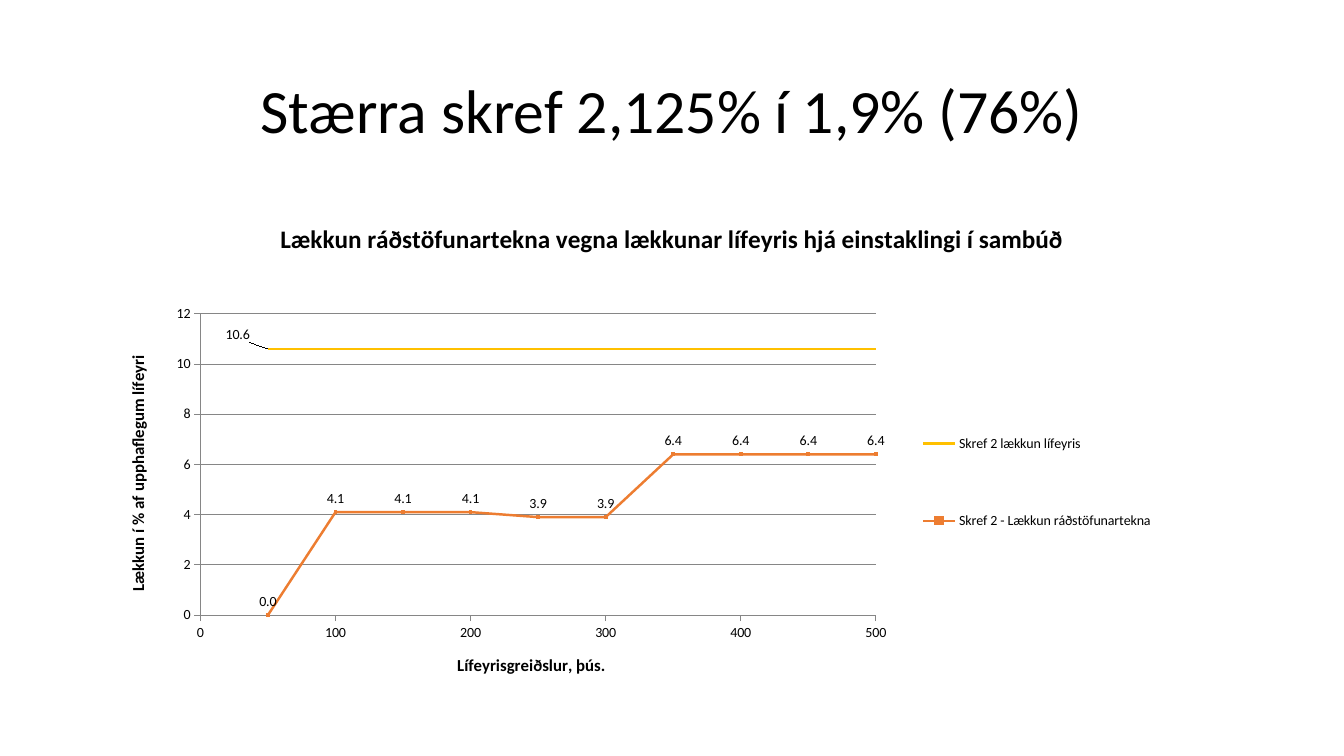
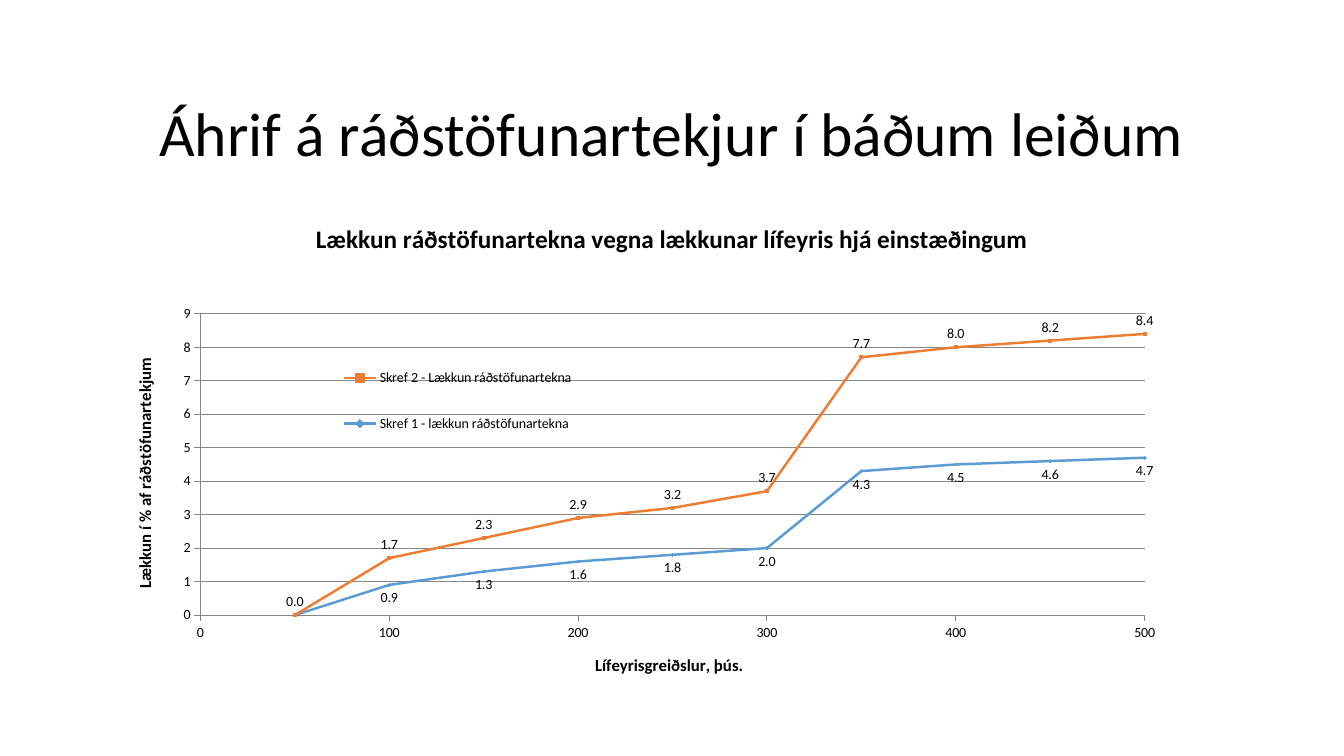
import dataclasses

import pptx
import pptx.chart.data
import pptx.chart.datalabel
import pptx.dml.color
import pptx.enum.chart
import pptx.enum.text
import pptx.oxml
import pptx.oxml.ns
import pptx.util
from lxml import etree

CHART_ENUM = pptx.enum.chart
COLUMNS, ROWS = 29, 30


@dataclasses.dataclass(frozen=True)
class Theme:
    font: str = "Calibri"
    text: str = "000000"
    grid: str = "868686"
    gold: str = "FFC000"
    orange: str = "ED7D31"
    blue: str = "5B9BD5"
    title_size: int = 44
    chart_title_size: int = 18
    axis_title_size: int = 12
    chart_size: int = 10
    series_width: float = 1.75
    axis_width: float = 0.75


THEME = Theme()


@dataclasses.dataclass
class Line:
    """One scatter series: its values, look and labels."""
    name: str
    values: list
    color: str
    marker: object = None
    label_position: object = None
    first_label: object = "shown"  # "shown", "hidden" or an (x, y) offset


def color_of(value):
    return pptx.dml.color.RGBColor.from_string(value)


def style_font(font, size, color=THEME.text, bold=False):
    font.name = THEME.font
    font.size = pptx.util.Pt(size)
    font.bold = bold
    font.color.rgb = color_of(color)


def write(frame, text, size, bold=False, align=None, spacing=None):
    para = frame.paragraphs[0]
    span = para.add_run()
    span.text = text
    style_font(span.font, size, bold=bold)
    if align is not None:
        para.alignment = align
    if spacing is not None:
        para.line_spacing = spacing


def style_line(line, color, width):
    line.color.rgb = color_of(color)
    line.width = pptx.util.Pt(width)


def add_child(parent, tag, value=None):
    child = etree.SubElement(parent, pptx.oxml.ns.qn("c:" + tag))
    if value is not None:
        child.set("val", str(value))
    return child


def set_layout(parent, index, inner=False, edge=True, **shares):
    """Place a chart part by shares of the chart; without edge they are offsets."""
    for old in parent.findall(pptx.oxml.ns.qn("c:layout")):
        parent.remove(old)
    layout = add_child(parent, "layout")
    manual = add_child(layout, "manualLayout")
    if inner:
        add_child(manual, "layoutTarget", "inner")
    if edge:
        add_child(manual, "xMode", "edge")
        add_child(manual, "yMode", "edge")
    for tag, share in shares.items():
        add_child(manual, tag, share)
    parent.insert(index, layout)


class Deck:
    def __init__(self):
        self.deck = pptx.Presentation()
        self.deck.slide_width = pptx.util.Inches(13.33)
        self.deck.slide_height = pptx.util.Inches(7.5)
        self.page = None

    def area(self, column, row, columns, rows):
        width = self.deck.slide_width / COLUMNS
        height = self.deck.slide_height / ROWS
        return [round(length) for length in
                (column * width, row * height, columns * width, rows * height)]

    def add_page(self):
        self.page = self.deck.slides.add_slide(self.deck.slide_layouts[6])

    def add_title(self, text, row):
        box = self.page.shapes.add_textbox(*self.area(2, row, 25, 5.8))
        frame = box.text_frame
        frame.word_wrap = True
        frame.vertical_anchor = pptx.enum.text.MSO_ANCHOR.MIDDLE
        write(frame, text, THEME.title_size,
              align=pptx.enum.text.PP_ALIGN.CENTER, spacing=0.9)

    def add_chart(self, title, value_title, top, step, lines, plot_width, legend):
        data = pptx.chart.data.XyChartData()
        for line in lines:
            series = data.add_series(line.name)
            for number, value in enumerate(line.values, 1):
                series.add_data_point(number * 50000, value)
        chart = self.page.shapes.add_chart(
            CHART_ENUM.XL_CHART_TYPE.XY_SCATTER_LINES,
            *self.area(2, 8, 25, 19.04), data).chart
        style_font(chart.font, THEME.chart_size)
        chart.has_title = True
        write(chart.chart_title.text_frame, title, THEME.chart_title_size, bold=True)
        chart.plots[0].vary_by_categories = False
        self.style_axis(chart.category_axis, "Lífeyrisgreiðslur, þús.",
                        500000, 100000, "#,##0,", False)
        self.style_axis(chart.value_axis, value_title, top, step, "0", True)
        for series, line in zip(chart.plots[0].series, lines):
            self.style_series(series, line)
        chart.has_legend = True
        chart.legend.position = CHART_ENUM.XL_LEGEND_POSITION.RIGHT
        chart.legend.include_in_layout = False
        set_layout(chart.legend._element, 1, **legend)
        plot_area = chart._chartSpace.chart.plotArea
        set_layout(plot_area, 0, inner=True, x=0.093, y=0.234, w=plot_width, h=0.628)

    def style_axis(self, axis, title, top, step, number_format, gridlines):
        axis.minimum_scale, axis.maximum_scale = 0, top
        axis.major_unit = step
        axis.major_tick_mark = CHART_ENUM.XL_TICK_MARK.OUTSIDE
        axis.minor_tick_mark = CHART_ENUM.XL_TICK_MARK.NONE
        axis.tick_labels.number_format = number_format
        axis.tick_labels.number_format_is_linked = False
        axis.has_major_gridlines = gridlines
        if gridlines:
            style_line(axis.major_gridlines.format.line, THEME.grid, THEME.axis_width)
        style_line(axis.format.line, THEME.grid, THEME.axis_width)
        axis.has_title = True
        write(axis.axis_title.text_frame, title, THEME.axis_title_size, bold=True)

    def style_series(self, series, line):
        series.smooth = False
        style_line(series.format.line, line.color, THEME.series_width)
        series.marker.style = line.marker or CHART_ENUM.XL_MARKER_STYLE.NONE
        if line.marker:
            series.marker.size = 2
            series.marker.format.fill.solid()
            series.marker.format.fill.fore_color.rgb = color_of(line.color)
            style_line(series.marker.format.line, line.color, THEME.axis_width)
        labels = pptx.chart.datalabel.DataLabels(series._element.get_or_add_dLbls())
        labels.show_value = line.label_position is not None
        labels.number_format = "0.0"
        labels.number_format_is_linked = False
        if line.label_position is not None:
            labels.position = line.label_position
        if line.first_label != "shown":
            self.adjust_first_label(series, line.first_label)

    def adjust_first_label(self, series, setting):
        label = series.points[0].data_label
        label.position = CHART_ENUM.XL_LABEL_POSITION.RIGHT
        element = series._element.get_or_add_dLbls().find(pptx.oxml.ns.qn("c:dLbl"))
        if setting == "hidden":
            for part in list(element)[1:]:
                element.remove(part)
            add_child(element, "delete", 1)
        else:
            set_layout(element, 1, edge=False, x=setting[0], y=setting[1])

    def save(self):
        self.deck.save("out.pptx")


def step_two(values):
    return Line("Skref 2 - Lækkun ráðstöfunartekna", values, THEME.orange,
                CHART_ENUM.XL_MARKER_STYLE.SQUARE,
                CHART_ENUM.XL_LABEL_POSITION.ABOVE)


def main():
    deck = Deck()

    deck.add_page()
    deck.add_title("Stærra skref 2,125% í 1,9% (76%)", 1.6)
    deck.add_chart(
        "Lækkun ráðstöfunartekna vegna lækkunar lífeyris hjá einstaklingi í sambúð",
        "Lækkun í % af upphaflegum lífeyri", 12, 2,
        [Line("Skref 2 lækkun lífeyris", [10.6] * 10, THEME.gold,
              first_label=(-0.04, -0.03)),
         step_two([0, 4.1, 4.1, 4.1, 3.9, 3.9, 6.4, 6.4, 6.4, 6.4])],
        plot_width=0.583, legend=dict(x=0.71, y=0.36, w=0.21, h=0.45))

    deck.add_page()
    deck.add_title("Áhrif á ráðstöfunartekjur í báðum leiðum", 2.52)
    deck.add_chart(
        "Lækkun ráðstöfunartekna vegna lækkunar lífeyris hjá einstæðingum",
        "Lækkun í % af ráðstöfunartekjum", 9, 1,
        [step_two([0, 1.7, 2.3, 2.9, 3.2, 3.7, 7.7, 8.0, 8.2, 8.4]),
         Line("Skref 1 - lækkun ráðstöfunartekna",
              [0, 0.9, 1.3, 1.6, 1.8, 2.0, 4.3, 4.5, 4.6, 4.7], THEME.blue,
              CHART_ENUM.XL_MARKER_STYLE.DIAMOND,
              CHART_ENUM.XL_LABEL_POSITION.BELOW, first_label="hidden")],
        plot_width=0.815, legend=dict(x=0.21, y=0.29, w=0.21, h=0.25))

    deck.save()


if __name__ == "__main__":
    main()
